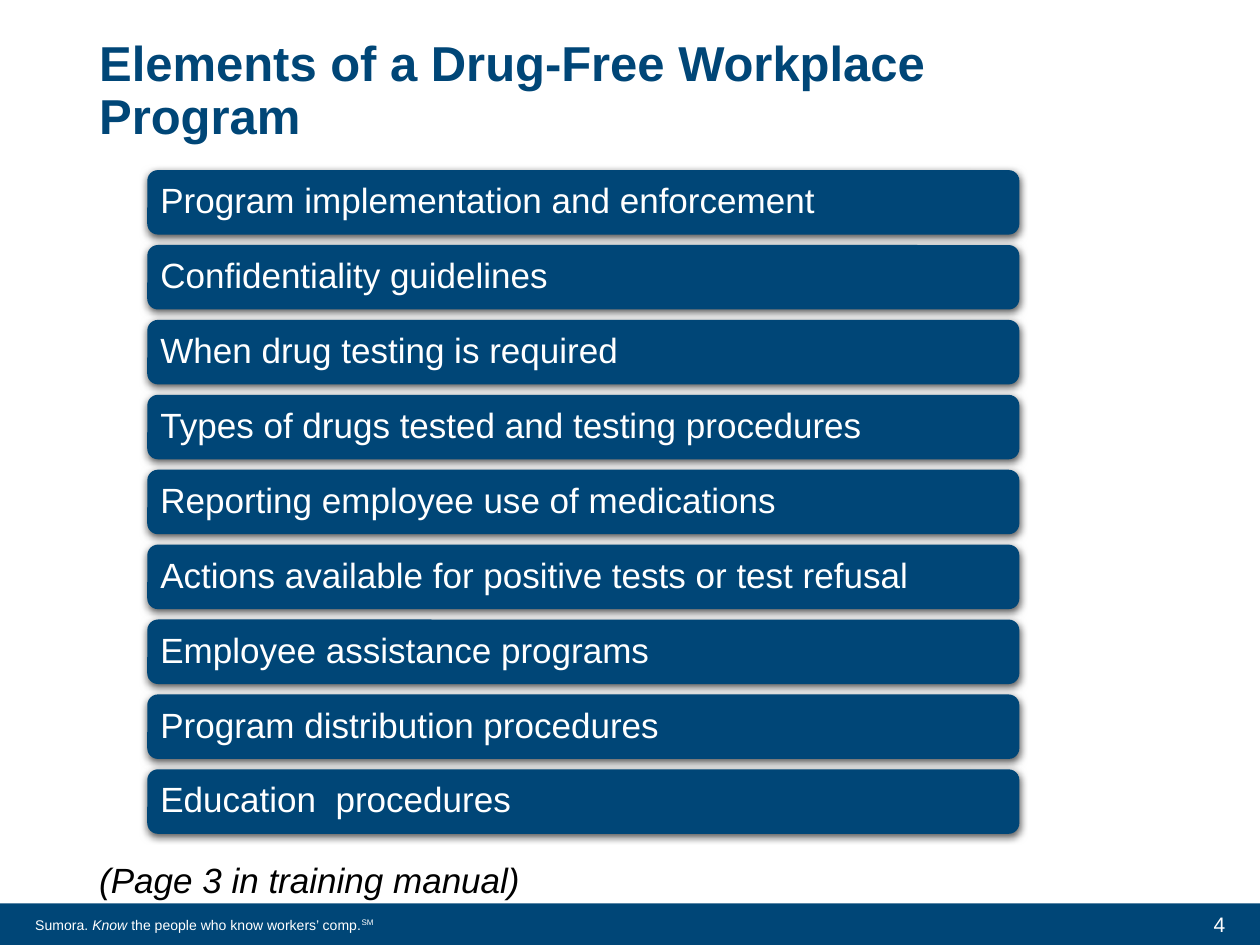
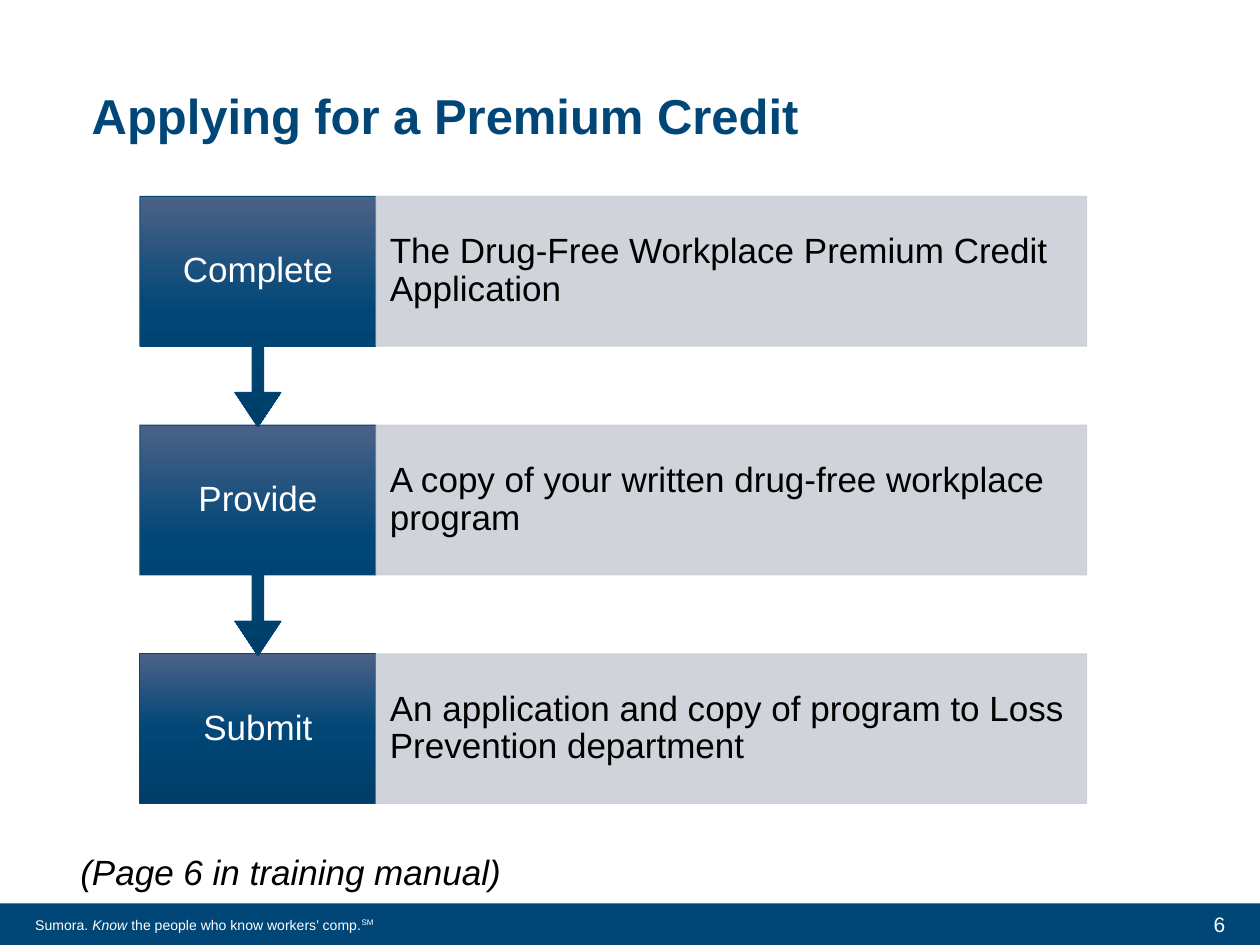
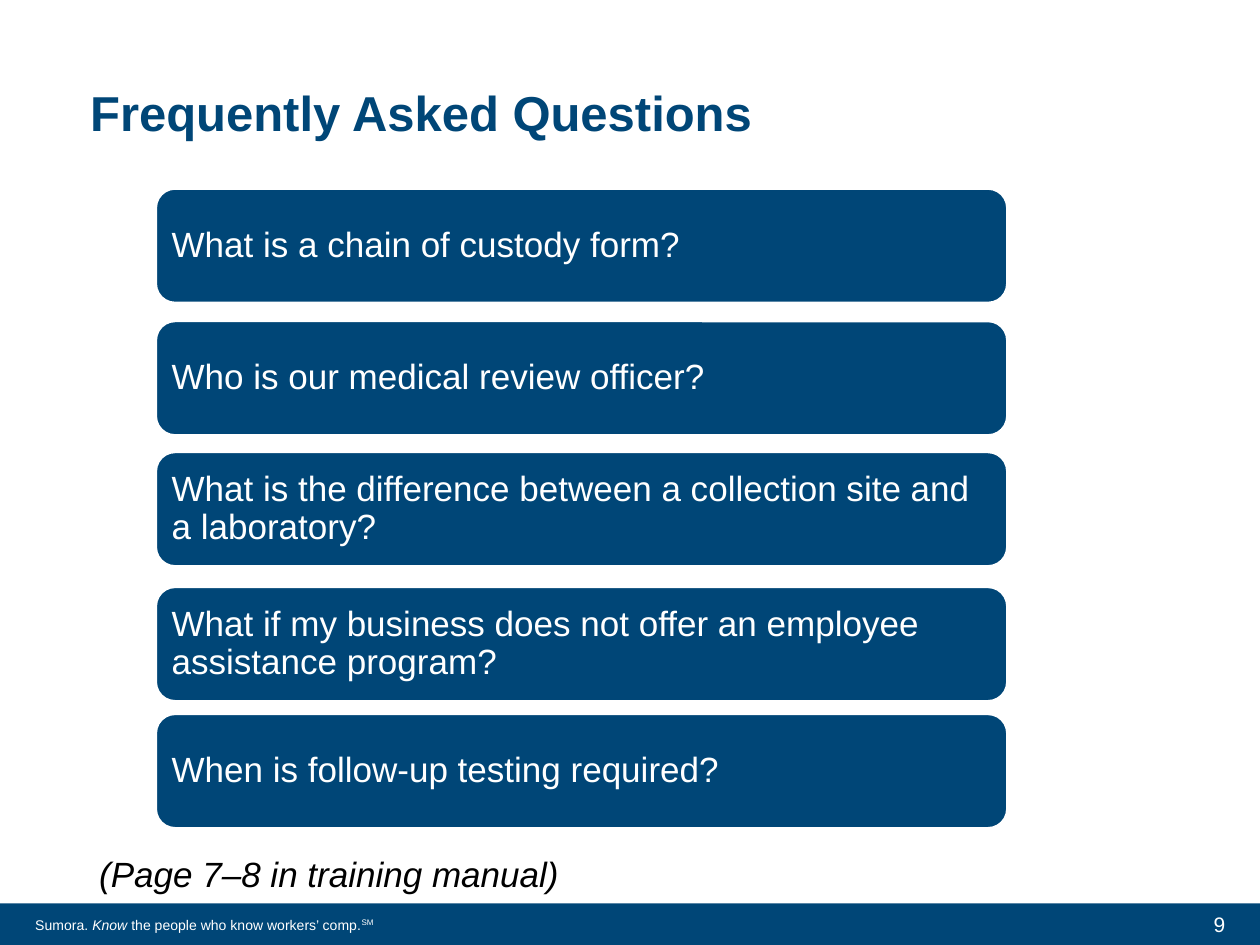
from lxml.etree import SubElement
from pptx import Presentation
from pptx.dml.color import RGBColor
from pptx.enum.shapes import MSO_SHAPE as Preset
from pptx.enum.text import MSO_ANCHOR as Anchor, PP_ALIGN as Align
from pptx.oxml.ns import qn
from pptx.util import Cm, Pt

WIDTH, HEIGHT = 25.4, 19.05
NAVY, WHITE, BLACK, GREY = "004677", "FFFFFF", "000000", "CCCFD6"
NAVY_FADE = [(0, "4B6287"), (50, NAVY), (100, "003E6A")]


def color(hex_code):
    return RGBColor.from_string(hex_code)


def add_alpha(paint, percent):
    """Make the solid colour inside a fill or line element translucent."""
    tint = paint.find(f".//{qn('a:srgbClr')}")
    SubElement(tint, qn("a:alpha"), val=str(percent * 1000))


class Deck:
    font = "Arial"

    def __init__(self):
        self.prs = Presentation()
        self.prs.slide_width, self.prs.slide_height = Cm(WIDTH), Cm(HEIGHT)
        self.slide = None

    def new_slide(self, title, title_box, note, note_box, number):
        """Start a slide with its title, manual reference and footer."""
        self.slide = self.prs.slides.add_slide(self.prs.slide_layouts[6])
        self.footer(number)
        self.text(title_box, [(title, {"bold": True})], 28, NAVY,
                  anchor=Anchor.BOTTOM, spacing=0.9)
        self.text(note_box, [(note, {"italic": True})], 20, BLACK,
                  spacing=0.9, before=10)

    def footer(self, number):
        self.shape(Preset.RECTANGLE, (0, 18.21, WIDTH, 0.84), NAVY)
        slogan = [("Sumora. ", {}), ("Know", {"italic": True}),
                  (" the people who know workers’ comp.", {}),
                  ("SM", {"raised": True})]
        self.text((0.46, 18.34, 8.81, 0.71), slogan, 8, WHITE)
        self.text((19.23, 18.11, 5.72, 1.02), [(number, {})], 12, WHITE,
                  anchor=Anchor.MIDDLE, align=Align.RIGHT)

    def text(self, box, runs, size, ink, **layout):
        frame = self.slide.shapes.add_textbox(*map(Cm, box)).text_frame
        self.fill_text(frame, runs, size, ink, **layout)

    def fill_text(self, frame, runs, size, ink, anchor=Anchor.TOP, align=Align.LEFT,
                  spacing=1.0, before=0, insets=(0.25, 0.13)):
        frame.word_wrap = True
        frame.vertical_anchor = anchor
        frame.margin_left = frame.margin_right = Cm(insets[0])
        frame.margin_top = frame.margin_bottom = Cm(insets[1])
        paragraph = frame.paragraphs[0]
        paragraph.alignment, paragraph.line_spacing = align, spacing
        paragraph.space_before = Pt(before)
        for words, style in runs:
            run = paragraph.add_run()
            run.text = words
            run.font.name, run.font.size = self.font, Pt(size)
            run.font.color.rgb = color(ink)
            run.font.bold = style.get("bold", False)
            run.font.italic = style.get("italic", False)
            if style.get("raised"):
                run.font._element.set("baseline", "30000")

    def shape(self, preset, box, fill, line=None, line_width=0.5):
        """Add a preset shape; fill is one colour or a list of gradient stops."""
        shape = self.slide.shapes.add_shape(preset, *map(Cm, box))
        shape.shadow.inherit = False
        if isinstance(fill, str):
            shape.fill.solid()
            shape.fill.fore_color.rgb = color(fill)
        else:
            self.gradient(shape, fill)
        if line:
            shape.line.color.rgb = color(line)
            shape.line.width = Pt(line_width)
        else:
            shape.line.fill.background()
        return shape

    def gradient(self, shape, stops):
        shape.fill.gradient()
        shape.fill.gradient_angle = 270
        stop_list = shape._element.spPr.find(f".//{qn('a:gsLst')}")
        stop_list.clear()
        for position, hex_code in stops:
            stop = SubElement(stop_list, qn("a:gs"), pos=str(position * 1000))
            SubElement(stop, qn("a:srgbClr"), val=hex_code)

    def bar(self, box, words, line=None, shadow=False):
        """Add a rounded navy bar with one statement."""
        bar = self.shape(Preset.ROUNDED_RECTANGLE, box, NAVY, line, 1)
        if shadow:
            effects = bar._element.spPr.find(qn("a:effectLst"))
            outer = SubElement(effects, qn("a:outerShdw"), blurRad=str(Pt(4.5)),
                               dist=str(Pt(1.5)), dir="5400000", rotWithShape="0")
            shade = SubElement(outer, qn("a:srgbClr"), val=BLACK)
            SubElement(shade, qn("a:alpha"), val="63000")
        self.fill_text(bar.text_frame, [(words, {})], 20, WHITE,
                       anchor=Anchor.MIDDLE, spacing=0.9, insets=(0.2, 0.2))

    def step(self, top, action, detail, leads_on):
        """Add an action box, with an arrow if another follows, and its detail."""
        left, width, height = 2.82, 4.76, 3.02
        if leads_on:
            box = self.shape(Preset.DOWN_ARROW_CALLOUT, (left, top, width, 4.65),
                             NAVY_FADE, NAVY)
            for index, ratio in enumerate((0.05, 0.1, 0.15, 0.65)):
                box.adjustments[index] = ratio
        else:
            box = self.shape(Preset.RECTANGLE, (left, top, width, height),
                             NAVY_FADE, NAVY)
        self.fill_text(box.text_frame, [(action, {})], 20, WHITE, anchor=Anchor.MIDDLE,
                       align=Align.CENTER, spacing=0.9, insets=(0.33, 0.41))
        panel = self.shape(Preset.RECTANGLE, (left + width, top, 14.33, height),
                           GREY, GREY)
        properties = panel._element.spPr
        add_alpha(properties.find(qn("a:solidFill")), 90)
        add_alpha(properties.find(qn("a:ln")), 90)
        self.fill_text(panel.text_frame, [(detail, {})], 20, BLACK,
                       anchor=Anchor.MIDDLE, spacing=0.9, insets=(0.28, 0.71))


ELEMENTS = [
    "Program implementation and enforcement",
    "Confidentiality guidelines",
    "When drug testing is required",
    "Types of drugs tested and testing procedures",
    "Reporting employee use of medications",
    "Actions available for positive tests or test refusal",
    "Employee assistance programs",
    "Program distribution procedures",
    "Education  procedures",
]
STEPS = [
    ("Complete", "The Drug-Free Workplace Premium Credit Application"),
    ("Provide", "A copy of your written drug-free workplace program"),
    ("Submit", "An application and copy of program to Loss Prevention department"),
]
QUESTIONS = [
    (3.81, "What is a chain of custody form?"),
    (6.48, "Who is our medical review officer?"),
    (9.12, "What is the difference between a collection site and a laboratory?"),
    (11.84, "What if my business does not offer an employee assistance program?"),
    (14.4, "When is follow-up testing required?"),
]


def main():
    deck = Deck()

    # Program elements
    deck.new_slide("Elements of a Drug-Free Workplace Program",
                   (1.75, 0.76, 21.36, 2.29),
                   "(Page 3 in training manual)", (1.75, 17.27, 10.39, 1.19), "4")
    for row, element in enumerate(ELEMENTS):
        deck.bar((2.97, 3.43 + row * 1.51, 17.58, 1.3), element, shadow=True)

    # Premium credit steps, last first so that each arrow tip lies on top
    deck.new_slide("Applying for a Premium Credit", (1.6, 0.38, 17.93, 2.67),
                   "(Page 6 in training manual)", (1.37, 17.12, 9.96, 1.68), "6")
    last = len(STEPS) - 1
    for row, (action, detail) in reversed(list(enumerate(STEPS))):
        deck.step(3.96 + row * 4.61, action, detail, leads_on=row < last)

    # Frequently asked questions
    deck.new_slide("Frequently Asked Questions", (1.57, 0.46, 22.28, 2.54),
                   "(Page 7–8 in training manual)", (1.75, 17.15, 9.98, 1.4), "9")
    for top, question in QUESTIONS:
        deck.bar((3.15, top, 17.15, 2.29), question, line=WHITE)

    deck.prs.save("out.pptx")


if __name__ == "__main__":
    main()
